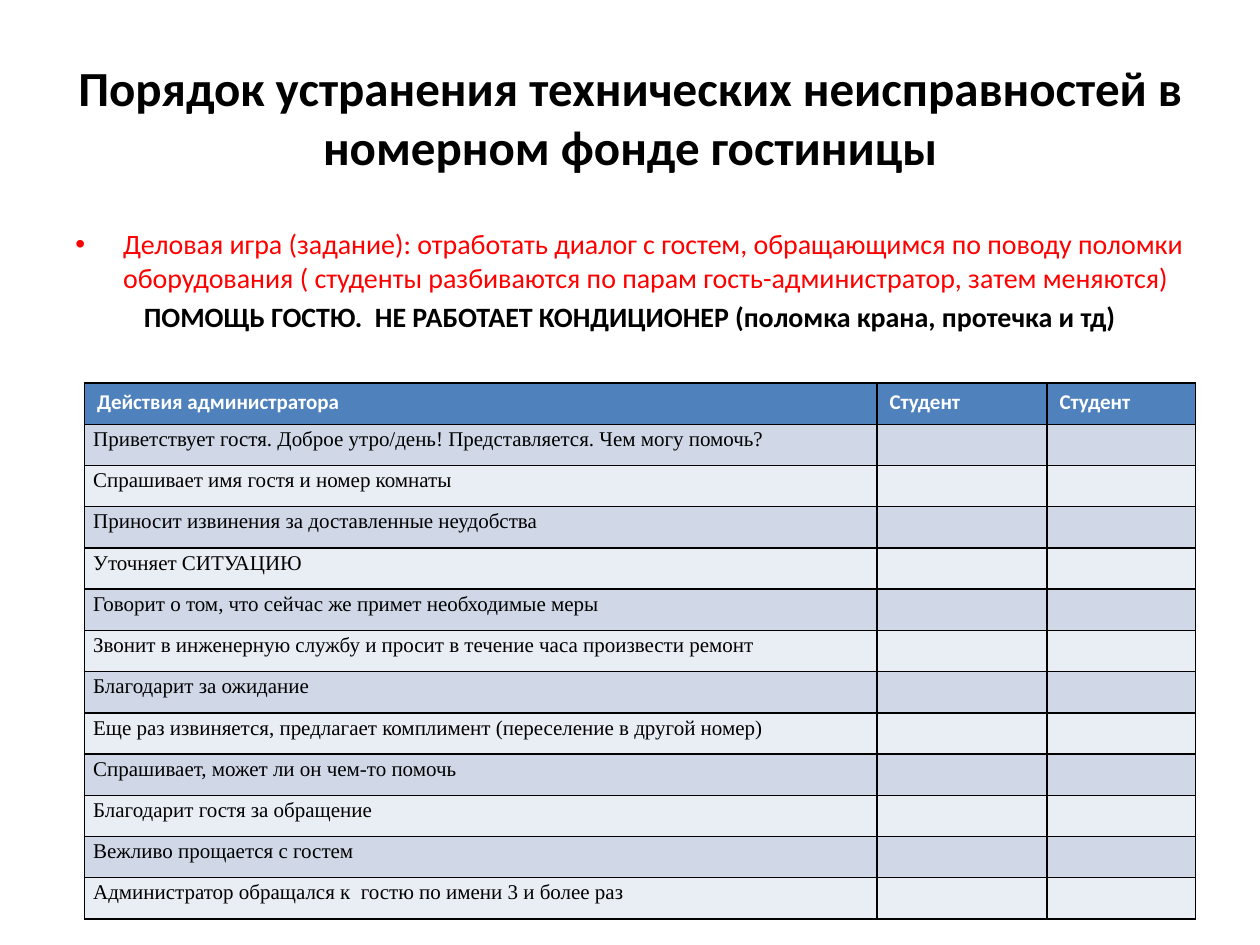
import pptx
import pptx.dml.color
import pptx.enum.text
import pptx.oxml.ns
import pptx.util
from lxml import etree

ACTIONS = [
    "Приветствует гостя. Доброе утро/день! Представляется. Чем могу помочь?",
    "Спрашивает имя гостя и номер комнаты",
    "Приносит извинения за доставленные неудобства",
    "Уточняет СИТУАЦИЮ",
    "Говорит о том, что сейчас же примет необходимые меры",
    "Звонит в инженерную службу и просит в течение часа произвести ремонт",
    "Благодарит за ожидание",
    "Еще раз извиняется, предлагает комплимент (переселение в другой номер)",
    "Спрашивает, может ли он чем-то помочь",
    "Благодарит гостя за обращение",
    "Вежливо прощается с гостем",
    "Администратор обращался к  гостю по имени 3 и более раз",
]
HEADERS = ["Действия администратора", "Студент", "Студент"]


def color(value):
    return pptx.dml.color.RGBColor.from_string(value)


def add_node(parent, tag, **attributes):
    return etree.SubElement(parent, pptx.oxml.ns.qn(tag), attributes)


class SlideBuilder:
    heading_font = "Calibri"
    table_font = "Times New Roman"
    black, white, red = "000000", "FFFFFF", "FF0000"
    header_fill = "4F81BD"
    bands = ["D0D8E8", "E9EDF4"]
    center = pptx.enum.text.PP_ALIGN.CENTER

    def __init__(self, deck, columns, rows):
        self.slide = deck.slides.add_slide(deck.slide_layouts[5])
        self.column = deck.slide_width / columns
        self.row = deck.slide_height / rows

    def area(self, left, top, width, height):
        return (round(left * self.column), round(top * self.row),
                round(width * self.column), round(height * self.row))

    def span(self, para, text, size, fill, bold=False, font=heading_font):
        span = para.add_run()
        span.text = text
        span.font.name = font
        span.font.size = pptx.util.Pt(size)
        span.font.bold = bold
        span.font.color.rgb = color(fill)

    def title(self, text, *place):
        box = self.slide.shapes.title
        box.left, box.top, box.width, box.height = self.area(*place)
        box.text_frame.vertical_anchor = pptx.enum.text.MSO_ANCHOR.MIDDLE
        para = box.text_frame.paragraphs[0]
        para.alignment = self.center
        self.span(para, text, 28, self.black, bold=True)

    def task(self, task, situation, *place):
        frame = self.slide.shapes.add_textbox(*self.area(*place)).text_frame
        frame.word_wrap = True
        bullet, caption = frame.paragraphs[0], frame.add_paragraph()
        for para in (bullet, caption):
            para.space_before = pptx.util.Pt(3.2)
        indent = pptx.util.Inches(0.38)
        properties = bullet._p.get_or_add_pPr()
        properties.set("marL", str(indent))
        properties.set("indent", str(-indent))
        add_node(properties, "a:buFont", typeface="Arial")
        add_node(properties, "a:buChar", char="•")
        self.span(bullet, task, 16, self.red)
        caption.alignment = self.center
        self.span(caption, situation, 16, self.black, bold=True)

    def style_cell(self, cell, fill):
        properties = cell._tc.get_or_add_tcPr()
        for side in ("a:lnL", "a:lnR", "a:lnT", "a:lnB"):
            line = add_node(properties, side, w=str(pptx.util.Pt(1)))
            add_node(add_node(line, "a:solidFill"), "a:srgbClr", val=self.black)
        cell.fill.solid()
        cell.fill.fore_color.rgb = color(fill)

    def checklist(self, headers, actions, widths, left, top, row_height):
        row_count = len(actions) + 1
        place = self.area(left, top, sum(widths), row_height * row_count)
        table = self.slide.shapes.add_table(row_count, len(headers), *place).table
        for column, width in zip(table.columns, widths):
            column.width = round(width * self.column)
        for row in table.rows:
            row.height = round(row_height * self.row)
        for index, text in enumerate(headers):
            cell = table.cell(0, index)
            self.style_cell(cell, self.header_fill)
            self.span(cell.text_frame.paragraphs[0], text, 12, self.white, bold=True)
        for number, text in enumerate(actions):
            cells = table.rows[number + 1].cells
            for cell in cells:
                cell.margin_left = cell.margin_right = pptx.util.Inches(0.07)
                cell.margin_top = cell.margin_bottom = 0
                self.style_cell(cell, self.bands[number % 2])
            para = cells[0].text_frame.paragraphs[0]
            para.line_spacing = 1.15
            self.span(para, text, 12, self.black, font=self.table_font)


def main():
    deck = pptx.Presentation()
    deck.slide_width = pptx.util.Inches(10)
    deck.slide_height = pptx.util.Inches(7.5)
    page = SlideBuilder(deck, columns=20, rows=30)
    page.task(
        "Деловая игра (задание): отработать диалог с гостем, обращающимся по поводу "
        "поломки оборудования ( студенты разбиваются по парам гость-администратор, "
        "затем меняются)",
        "ПОМОЩЬ ГОСТЮ.  НЕ РАБОТАЕТ КОНДИЦИОНЕР (поломка крана, протечка и тд)",
        1, 7, 18, 19.8)
    page.title("Порядок устранения технических неисправностей в номерном фонде гостиницы",
               1, 1.2, 18, 5)
    page.checklist(HEADERS, ACTIONS, [12.58, 2.7, 2.36], 1.34, 12.16, 1.31)
    deck.save("out.pptx")


if __name__ == "__main__":
    main()
